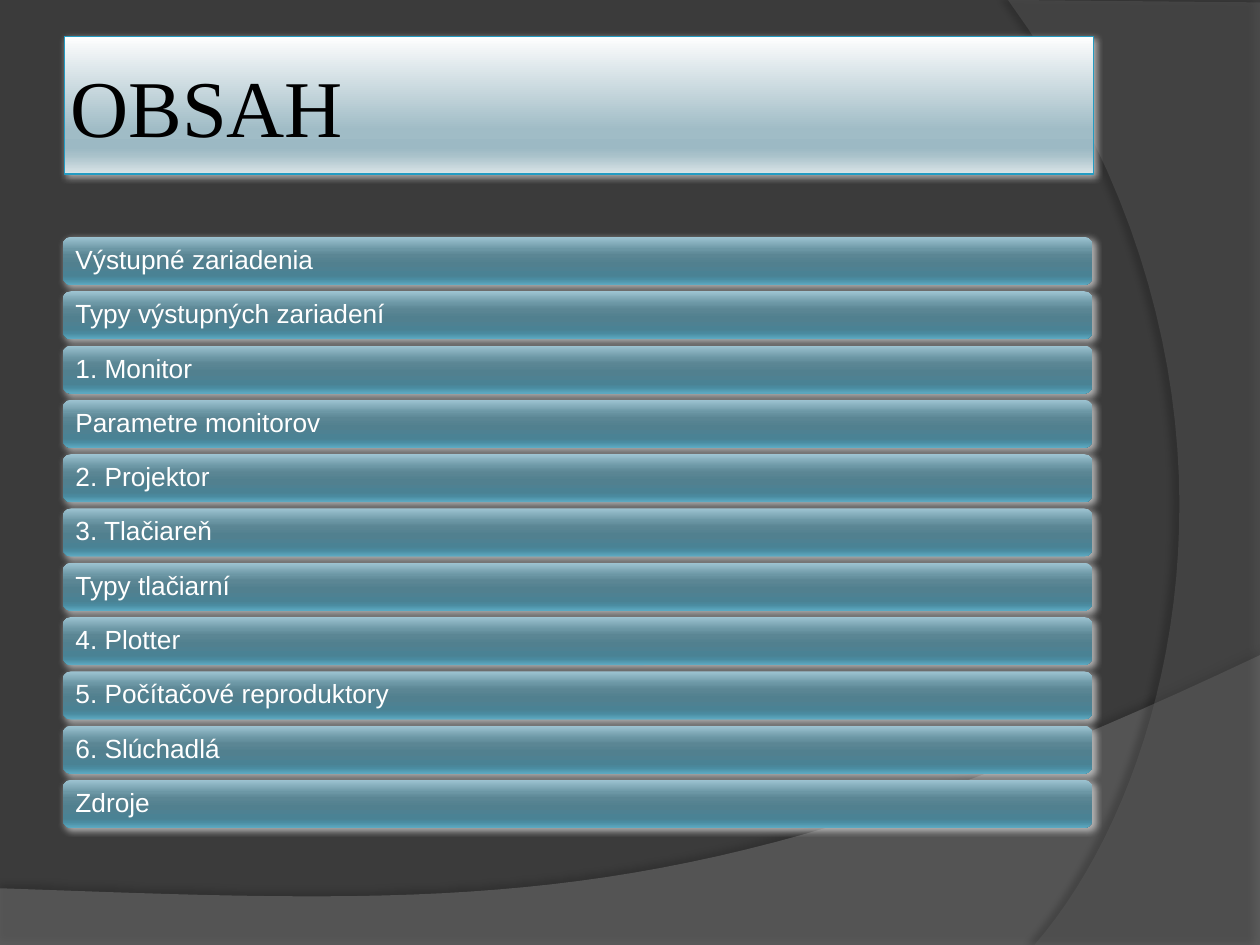
from lxml.etree import SubElement
from pptx import Presentation
from pptx.dml.color import RGBColor
from pptx.enum.shapes import MSO_SHAPE as SHAPE
from pptx.enum.text import MSO_ANCHOR as ANCHOR, PP_ALIGN as ALIGN
from pptx.oxml.ns import qn
from pptx.util import Pt

BACKGROUND = RGBColor(0x3B, 0x3B, 0x3B)
WAVE = RGBColor(0x7F, 0x7F, 0x7F)
ARC = RGBColor(0x5E, 0x5E, 0x5E)
BLACK = RGBColor(0, 0, 0)
WHITE = RGBColor(0xFF, 0xFF, 0xFF)
GLOW = RGBColor(0xD8, 0xD8, 0xD8)
BORDER = RGBColor(0x23, 0x9B, 0xC2)
TITLE_STOPS = [
    (0, RGBColor(0xFE, 0xFE, 0xFE)),
    (68, RGBColor(0xA0, 0xBC, 0xC6)),
    (81, RGBColor(0x9C, 0xB9, 0xC4)),
    (86, RGBColor(0xA7, 0xC0, 0xC9)),
    (100, RGBColor(0xDA, 0xE4, 0xE7)),
]
BAR_STOPS = [
    (0, RGBColor(0x9E, 0xC4, 0xD2)),
    (25, RGBColor(0x6C, 0x97, 0xA5)),
    (38, RGBColor(0x5B, 0x86, 0x94)),
    (55, RGBColor(0x51, 0x80, 0x8F)),
    (80, RGBColor(0x4A, 0x82, 0x94)),
    (88, RGBColor(0x4A, 0x8B, 0xA0)),
    (100, RGBColor(0x5D, 0xAA, 0xC2)),
]
TOPICS = [
    "Výstupné zariadenia",
    "Typy výstupných zariadení",
    "1. Monitor",
    "Parametre monitorov",
    "2. Projektor",
    "3. Tlačiareň",
    "Typy tlačiarní",
    "4. Plotter",
    "5. Počítačové reproduktory",
    "6. Slúchadlá",
    "Zdroje",
]


def curve(p0, p1, p2, p3, steps=40):
    """Return points along a cubic Bezier curve, without its start."""
    points = []
    for i in range(1, steps + 1):
        t = i / steps
        u = 1 - t
        weights = u**3, 3 * u * u * t, 3 * u * t * t, t**3
        points.append(tuple(sum(w * c for w, c in zip(weights, axis))
                            for axis in zip(p0, p1, p2, p3)))
    return points


class SlideBuilder:
    """Draw styled elements on the current slide, with lengths in points."""

    def __init__(self, slide):
        self.slide = slide
        fill = slide.background.fill
        fill.solid()
        fill.fore_color.rgb = BACKGROUND

    def color(self, parent, rgb, alpha=100):
        clr = SubElement(parent, qn("a:srgbClr"), val=str(rgb))
        if alpha < 100:
            SubElement(clr, qn("a:alpha"), val=str(alpha * 1000))

    def shadow(self, s, rgb, alpha, blur, dist, angle):
        s.shadow.inherit = False
        effects = s._element.spPr.find(qn("a:effectLst"))
        outer = SubElement(effects, qn("a:outerShdw"), blurRad=str(Pt(blur)),
                           dist=str(Pt(dist)), dir=str(angle * 60000), rotWithShape="0")
        self.color(outer, rgb, alpha)

    def gradient(self, s, stops):
        s.fill.gradient()
        s.fill.gradient_angle = 270
        stop_list = s._element.spPr.find(".//" + qn("a:gsLst"))
        for gs in list(stop_list):
            stop_list.remove(gs)
        for pos, rgb in stops:
            gs = SubElement(stop_list, qn("a:gs"), pos=str(pos * 1000))
            self.color(gs, rgb)

    def backdrop(self, points, rgb, alpha, shadow):
        (x, y), *rest = [(Pt(px), Pt(py)) for px, py in points]
        builder = self.slide.shapes.build_freeform(x, y)
        builder.add_line_segments(rest, close=True)
        s = builder.convert_to_shape()
        s.fill.solid()
        s.fill.fore_color.rgb = rgb
        clr = s._element.spPr.find(qn("a:solidFill")).find(qn("a:srgbClr"))
        SubElement(clr, qn("a:alpha"), val=str(alpha * 1000))
        s.line.fill.background()
        self.shadow(s, BLACK, *shadow)

    def panel(self, kind, box, stops, text, font, size, rgb, inset, border=None):
        s = self.slide.shapes.add_shape(kind, *map(Pt, box))
        self.gradient(s, stops)
        if border is None:
            s.line.fill.background()
        else:
            s.line.color.rgb = border
            s.line.width = Pt(0.75)
        self.shadow(s, GLOW, 75, 4, 1.5, 45)
        tf = s.text_frame
        tf.word_wrap = True
        tf.vertical_anchor = ANCHOR.MIDDLE
        tf.margin_left = tf.margin_right = Pt(inset)
        tf.margin_top = tf.margin_bottom = Pt(3.6)
        p = tf.paragraphs[0]
        p.alignment = ALIGN.LEFT
        r = p.add_run()
        r.text = text
        r.font.name = font
        r.font.size = Pt(size)
        r.font.color.rgb = rgb
        return p

    def title(self, text):
        self.panel(SHAPE.RECTANGLE, (36.7, 20.9, 588.2, 78.5), TITLE_STOPS, text,
                   "Times New Roman", 46, BLACK, 3.6, BORDER)

    def bar(self, top, text):
        p = self.panel(SHAPE.ROUNDED_RECTANGLE, (36, top, 588.2, 27.4), BAR_STOPS,
                       text, "Arial", 15, WHITE, 5.8)
        p.line_spacing = 0.9


def main():
    prs = Presentation()
    prs.slide_width, prs.slide_height = Pt(720), Pt(540)
    page = SlideBuilder(prs.slides.add_slide(prs.slide_layouts[6]))

    wave = [(0, 507.6), (0, 540), (720, 540), (720, 374.4)]
    wave += curve((720, 374.4), (402.5, 524.9), (281.5, 517.7), (0, 507.6))
    page.backdrop(wave, WAVE, 45, (35, 4, 3.5, 270))
    arc = [(720, 1.4), (720, 540), (591.1, 540)]
    arc += curve((591.1, 540), (673.2, 445.7), (733, 216), (576, 0))
    page.backdrop(arc, ARC, 40, (45, 4, 4, 180))

    page.title("OBSAH")
    for i, topic in enumerate(TOPICS):
        page.bar(135.4 + 31.03 * i, topic)
    prs.save("out.pptx")


if __name__ == "__main__":
    main()
